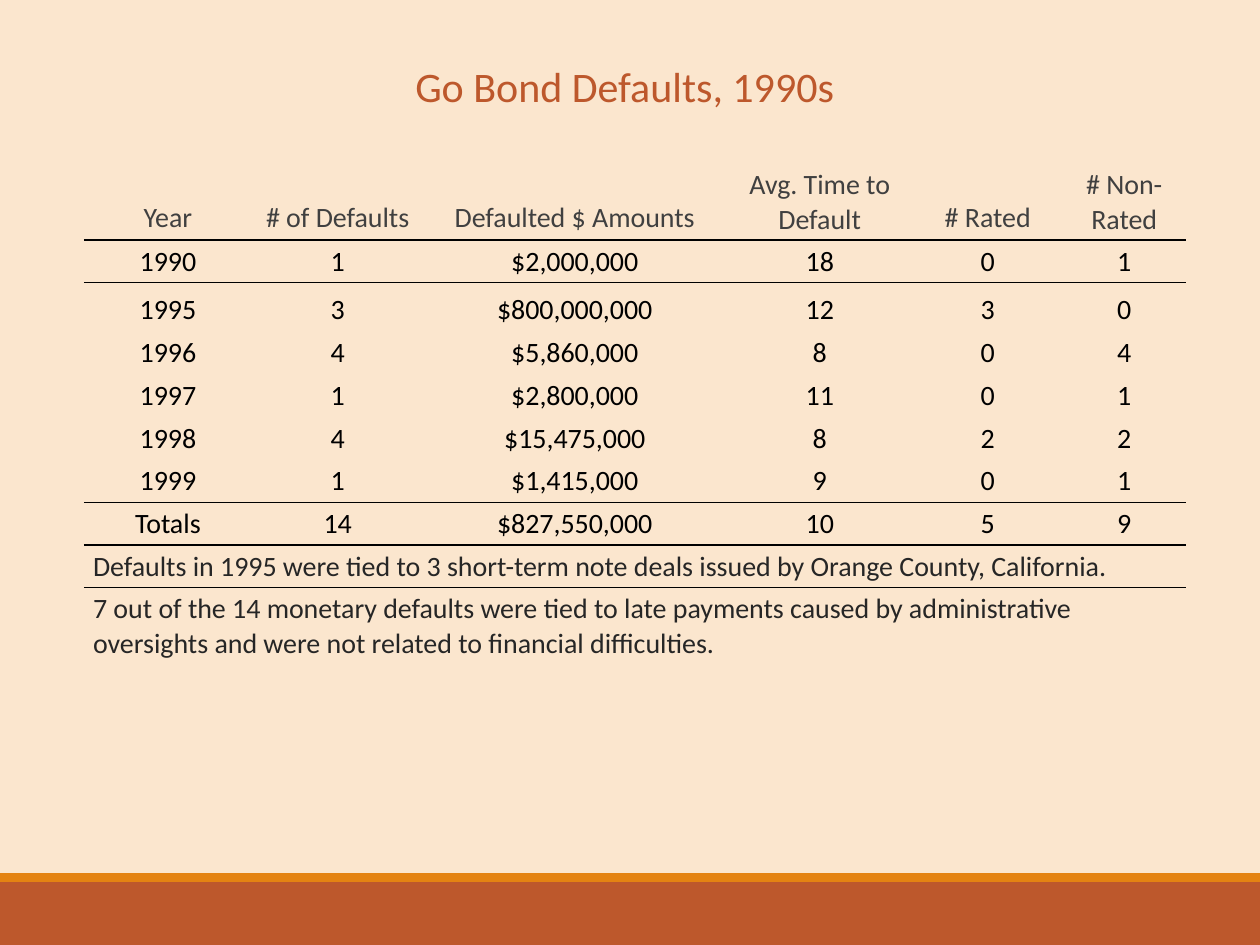
from lxml import etree
from pptx import Presentation
from pptx import util as u
from pptx.dml import color
from pptx.enum import shapes, text
from pptx.oxml import ns

FONT = "Calibri"
RUST, ORANGE, CREAM = "BD582C", "E48312", "FBE6CE"
BLACK, HEADING, NOTE, GREY = "000000", "404040", "262626", "808080"
NO_STYLE = "{2D5ABB26-0587-4C30-8999-92F81FD0307C}"

HEADINGS = ["Year", "# of Defaults", "Defaulted $ Amounts",
            "Avg. Time to Default", "# Rated", "# Non-Rated"]
DEFAULTS = [
    ["1990", "1", "$2,000,000", "18", "0", "1"],
    ["1995", "3", "$800,000,000", "12", "3", "0"],
    ["1996", "4", "$5,860,000", "8", "0", "4"],
    ["1997", "1", "$2,800,000", "11", "0", "1"],
    ["1998", "4", "$15,475,000", "8", "2", "2"],
    ["1999", "1", "$1,415,000", "9", "0", "1"],
    ["Totals", "14", "$827,550,000", "10", "5", "9"],
]
NOTES = [
    "Defaults in 1995 were tied to 3 short-term note deals issued by Orange County, California.",
    "7 out of the 14 monetary defaults were tied to late payments caused by administrative "
    "oversights and were not related to financial difficulties.",
]
COLUMN_WIDTHS = [96, 98, 173, 107, 85, 71]
ROW_HEIGHTS = [42.5, 24, 28] + [24] * 6 + [42.5]
RULED_ROWS = {0, 6, 7}


def rgb(value):
    return color.RGBColor.from_string(value)


def points(*lengths):
    return [u.Pt(length) for length in lengths]


def write(paragraph, words, size, ink, align):
    paragraph.alignment = align
    run = paragraph.add_run()
    run.text = words
    run.font.name = FONT
    run.font.size = u.Pt(size)
    run.font.color.rgb = rgb(ink)


def add_footer_bands(slide, left, top, width, height):
    stripe_height = 5
    for y, h, fill in [(top + stripe_height, height - stripe_height, RUST),
                       (top, stripe_height, ORANGE)]:
        band = slide.shapes.add_shape(shapes.MSO_SHAPE.RECTANGLE, *points(left, y, width, h))
        band.shadow.inherit = False
        band.fill.solid()
        band.fill.fore_color.rgb = rgb(fill)
        band.line.fill.background()


def add_rule(slide, left, top, width):
    rule = slide.shapes.add_connector(shapes.MSO_CONNECTOR.STRAIGHT,
                                      *points(left, top, left + width, top))
    rule.line.color.rgb = rgb(GREY)
    rule.line.width = u.Pt(0.5)
    etree.SubElement(rule._element.spPr, ns.qn("a:effectLst"))


def place_title(slide, left, top, width, height):
    title = slide.shapes.title
    title.left, title.top, title.width, title.height = points(left, top, width, height)
    frame = title.text_frame
    frame.word_wrap = True
    frame.auto_size = text.MSO_AUTO_SIZE.SHAPE_TO_FIT_TEXT
    frame.vertical_anchor = text.MSO_ANCHOR.MIDDLE
    heading = frame.paragraphs[0]
    heading.line_spacing = 0.8
    write(heading, "Go Bond Defaults, 1990s", 24, RUST, text.PP_ALIGN.CENTER)


def add_border(cell, side):
    border = etree.SubElement(cell._tc.get_or_add_tcPr(), ns.qn("a:ln" + side), w=str(u.Pt(1)))
    fill = etree.SubElement(border, ns.qn("a:solidFill"))
    etree.SubElement(fill, ns.qn("a:srgbClr"), val=BLACK)


def fill_cell(cell, words, ink, align, sides):
    cell.margin_left = cell.margin_right = u.Pt(5.2)
    cell.margin_top = cell.margin_bottom = u.Pt(2.6)
    cell.vertical_anchor = text.MSO_ANCHOR.BOTTOM
    for side in sides:
        add_border(cell, side)
    cell.fill.background()
    write(cell.text_frame.paragraphs[0], words, 16, ink, align)


def add_defaults_table(slide, left, top):
    frame = slide.shapes.add_table(
        len(ROW_HEIGHTS), len(COLUMN_WIDTHS),
        *points(left, top, sum(COLUMN_WIDTHS), sum(ROW_HEIGHTS)))
    table = frame.table
    table.first_row = table.horz_banding = False
    table._tbl.tblPr.find(ns.qn("a:tableStyleId")).text = NO_STYLE
    for column, width in zip(table.columns, COLUMN_WIDTHS):
        column.width = u.Pt(width)
    for row, height in zip(table.rows, ROW_HEIGHTS):
        row.height = u.Pt(height)

    for r, entries in enumerate([HEADINGS] + DEFAULTS):
        sides = ["T"] * (r - 1 in RULED_ROWS) + ["B"] * (r in RULED_ROWS)
        for c, entry in enumerate(entries):
            fill_cell(table.cell(r, c), entry, BLACK if r else HEADING,
                      text.PP_ALIGN.CENTER, sides)

    last_column = len(COLUMN_WIDTHS) - 1
    for r, note in enumerate(NOTES, len(DEFAULTS) + 1):
        note_cell = table.cell(r, 0)
        note_cell.merge(table.cell(r, last_column))
        for c in range(last_column + 1):
            if r - 1 in RULED_ROWS and c:
                add_border(table.cell(r, c), "T")
        fill_cell(note_cell, note, NOTE, text.PP_ALIGN.LEFT,
                  ["T"] * (r - 1 in RULED_ROWS))


def main():
    deck = Presentation()
    deck.slide_width, deck.slide_height = points(720, 540)
    slide = deck.slides.add_slide(deck.slide_layouts[5])
    slide.background.fill.solid()
    slide.background.fill.fore_color.rgb = rgb(CREAM)
    add_footer_bands(slide, 0, 499, 720, 41)
    add_rule(slide, 70.5, 136.8, 588)
    place_title(slide, 192, 36, 330, 31)
    add_defaults_table(slide, 48, 93.6)
    deck.save("out.pptx")


if __name__ == "__main__":
    main()
